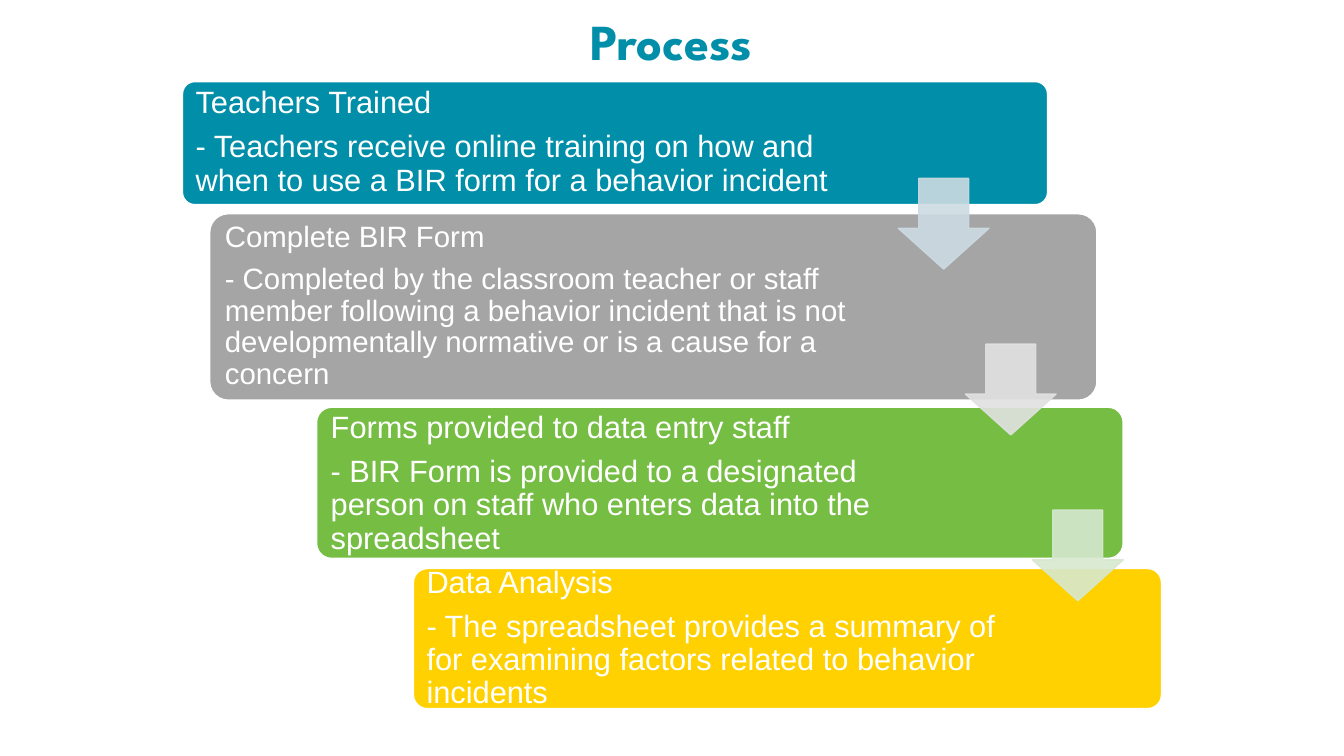
import pptx
import pptx.util
import pptx.dml.color
import pptx.enum.shapes
import pptx.enum.text
import pptx.oxml
import pptx.oxml.ns

Inches = pptx.util.Inches
Pt = pptx.util.Pt
shapes = pptx.enum.shapes.MSO_SHAPE

colors = {
    "teal": "008EA9", "gray": "A5A5A5", "green": "75BD43", "yellow": "FFD100",
    "pale_teal": "CCDBE2", "pale_gray": "E1E1E1", "pale_green": "D6E8CF",
    "white": "FFFFFF",
}

deck = pptx.Presentation()
deck.slide_width = Inches(13.33)
deck.slide_height = Inches(7.5)
page = deck.slides.add_slide(deck.slide_layouts[6])


def add_filled_shape(kind, place, adjustments, fill, line, opacity=100):
    shape = page.shapes.add_shape(kind, *map(Inches, place))
    shape.shadow.inherit = False
    for index, value in enumerate(adjustments):
        shape.adjustments[index] = value
    shape.fill.solid()
    shape.fill.fore_color.rgb = pptx.dml.color.RGBColor.from_string(colors[fill])
    shape.line.color.rgb = pptx.dml.color.RGBColor.from_string(colors[line])
    shape.line.width = Pt(1)
    if opacity < 100:
        for color in shape._element.spPr.iter(pptx.oxml.ns.qn("a:srgbClr")):
            alpha = pptx.oxml.parse_xml(
                f'<a:alpha {pptx.oxml.ns.nsdecls("a")} val="{opacity * 1000}"/>')
            color.append(alpha)


def add_text(place, text, font, size, color, margin, space_after=0):
    box = page.shapes.add_textbox(*map(Inches, place))
    frame = box.text_frame
    frame.word_wrap = True
    frame.vertical_anchor = pptx.enum.text.MSO_ANCHOR.MIDDLE
    frame.margin_left = frame.margin_right = Inches(margin)
    frame.margin_top = frame.margin_bottom = Inches(margin)
    frame.text = text
    for para in frame.paragraphs:
        para.line_spacing = 0.9
        para.space_after = Pt(space_after)
        for span in para.runs:
            span.font.name = font
            span.font.size = Pt(size)
            span.font.color.rgb = pptx.dml.color.RGBColor.from_string(colors[color])
    return frame


title = add_text((2.35, 0.07, 8.62, 0.73), "Process", "League Spartan", 36, "teal", 0.05)
title.paragraphs[0].alignment = pptx.enum.text.PP_ALIGN.CENTER
title.paragraphs[0].runs[0].font.bold = True

steps = [
    ("teal", (1.81, 0.81, 8.58, 1.22), (1.85, 0.84, 6.86, 1.15), 22,
     "Teachers Trained",
     "- Teachers receive online training on how and when to use a BIR form "
     "for a behavior incident"),
    ("gray", (2.08, 2.12, 8.8, 1.85), (2.14, 2.17, 6.96, 1.74), 21,
     "Complete BIR Form",
     "- Completed by the classroom teacher or staff member following a behavior "
     "incident that is not developmentally normative or is a cause for a concern"),
    ("green", (3.14, 4.04, 8, 1.5), (3.19, 4.09, 6.35, 1.42), 22,
     "Forms provided to data entry staff",
     "- BIR Form is provided to a designated person on staff who enters data "
     "into the spreadsheet"),
    ("yellow", (4.1, 5.64, 7.42, 1.39), (4.14, 5.68, 5.88, 1.31), 22,
     "Data Analysis",
     "- The spreadsheet provides a summary of for examining factors related "
     "to behavior incidents"),
]
for fill, card, text_area, size, heading, detail in steps:
    add_filled_shape(shapes.ROUNDED_RECTANGLE, card, [0.1], fill, "white")
    add_text(text_area, f"{heading}\n{detail}", "Arial", size, "white", 0.09, size * 0.35)

for index, tint in enumerate(["pale_teal", "pale_gray", "pale_green"]):
    place = (8.91 + 0.665 * index, 1.77 + 1.645 * index, 0.9, 0.9)
    add_filled_shape(shapes.DOWN_ARROW, place, [0.55, 0.45], tint, tint, 90)

deck.save("out.pptx")
